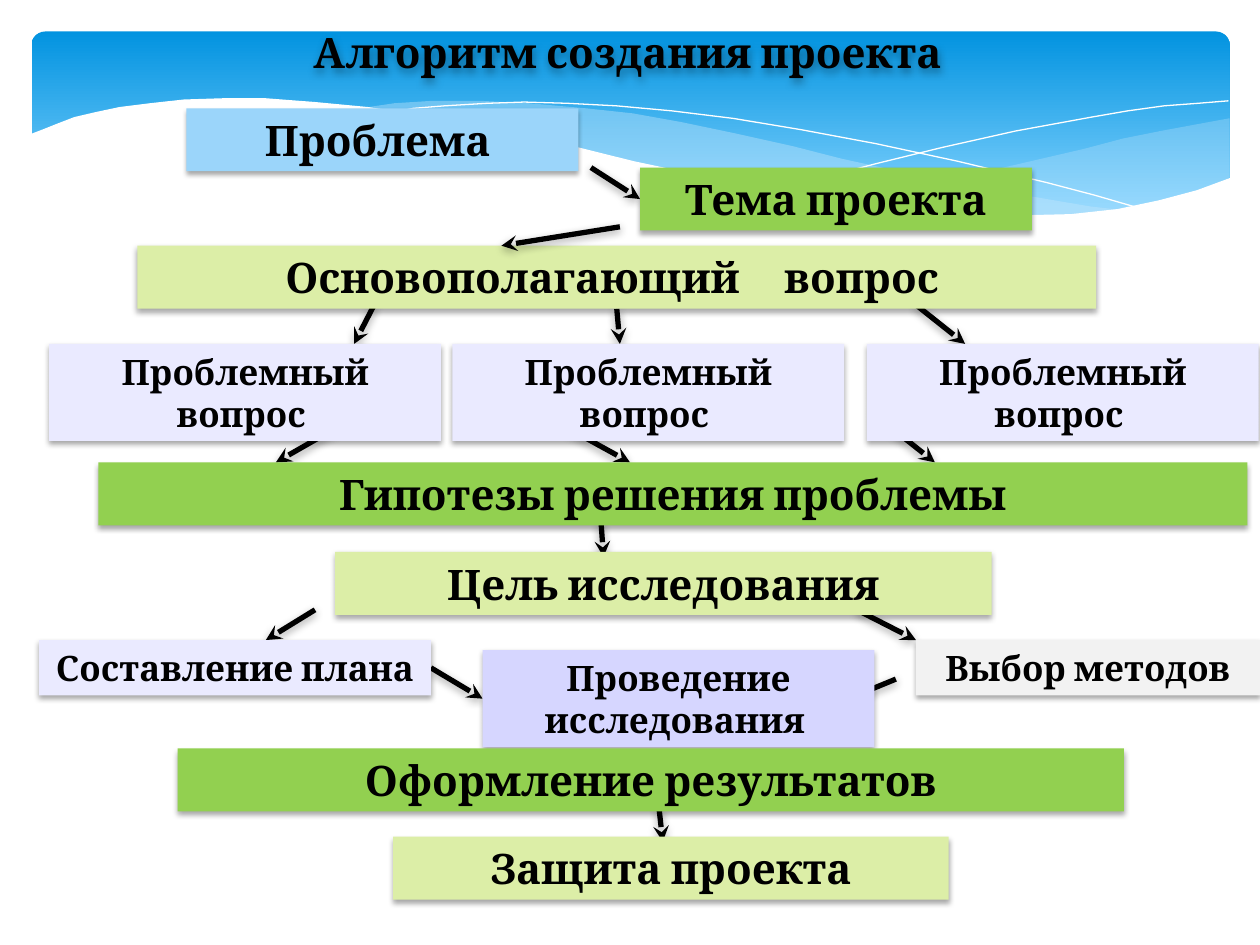
from dataclasses import dataclass

from lxml.etree import SubElement
from pptx import Presentation
from pptx.dml.color import RGBColor
from pptx.enum.shapes import MSO_CONNECTOR as Connector, MSO_SHAPE as Shape
from pptx.enum.text import MSO_ANCHOR as Anchor, MSO_AUTO_SIZE as AutoSize, PP_ALIGN as Align
from pptx.oxml.ns import qn
from pptx.util import Pt

PX = 9144
TOP, LEFT, BOTTOM, RIGHT = 0, 1, 2, 3


@dataclass(frozen=True)
class Theme:
    font: str = "Cambria"
    large: int = 24
    small: int = 20
    arrow_width: int = 3
    ink: str = "000000"
    white: str = "FFFFFF"
    banner_top: str = "0293E0"
    banner_bottom: str = "83D3FE"
    wave: str = "C6E7FC"
    blue: str = "9BD5FA"
    green: str = "92D050"
    lime: str = "DCEEA7"
    lavender: str = "EAEAFF"
    violet: str = "D6D6FF"
    gray: str = "F2F2F2"


THEME = Theme()

FRONT_WAVE = [
    (975, 94), (948, 99), (921, 104), (891, 110), (861, 118), (805, 131), (753, 143),
    (706, 152), (661, 160), (691, 164), (719, 167), (745, 169), (769, 171), (792, 172),
    (824, 172), (854, 170), (881, 167), (905, 163), (928, 158), (949, 152), (976, 141),
    (976, 94),
]
BACK_WAVE = [
    (893, 167), (866, 164), (807, 154), (741, 142), (668, 126), (629, 116), (584, 106),
    (541, 97), (502, 90), (465, 86), (420, 82), (380, 80), (344, 80), (313, 82), (286, 86),
    (323, 90), (362, 97), (404, 106), (449, 116), (530, 135), (584, 146), (634, 156),
    (680, 163), (722, 168), (761, 171), (796, 173), (828, 173), (857, 171), (893, 167),
]
FALLING_CURVE = [
    (309, 90), (328, 86), (353, 84), (387, 82), (416, 81), (450, 82), (489, 84), (533, 88),
    (582, 94), (636, 103), (695, 114), (760, 128), (831, 145), (869, 155), (907, 166),
]
RISING_CURVE = [
    (613, 151), (653, 141), (695, 130), (748, 117), (806, 104), (866, 93), (895, 88),
    (924, 84), (951, 82), (975, 80),
]
WHITE_GROUND = [
    (977, 141), (950, 151), (920, 159), (887, 166), (850, 170), (809, 171), (761, 170),
    (708, 165), (648, 156), (579, 144), (503, 128), (447, 114), (391, 102), (340, 92),
    (292, 85), (250, 81), (211, 78), (177, 78), (146, 79), (119, 82), (95, 85), (76, 89),
    (59, 93), (46, 98), (36, 102), (23, 107), (23, 224), (977, 224), (977, 141),
]

BOXES = {
    "problem": ("Проблема ", 148, 86, 311, 50, THEME.blue),
    "topic": ("Тема проекта", 508, 133, 311, 50, THEME.green),
    "key question": ("Основополагающий вопрос ", 109, 195, 761, 50, THEME.lime),
    "question 1": ("Проблемный вопрос ", 39, 273, 311, 77, THEME.lavender),
    "question 2": ("Проблемный вопрос ", 359, 273, 311, 77, THEME.lavender),
    "question 3": ("Проблемный вопрос ", 688, 273, 311, 77, THEME.lavender),
    "hypotheses": ("Гипотезы решения проблемы", 78, 367, 912, 50, THEME.green),
    "goal": ("Цель исследования", 266, 438, 521, 50, THEME.lime),
    "research": ("Проведение исследования ", 383, 516, 311, 77, THEME.violet),
    "plan": ("Составление плана", 31, 508, 311, 44, THEME.lavender),
    "methods": ("Выбор методов", 727, 508, 273, 44, THEME.gray),
    "results": ("Оформление результатов", 141, 594, 751, 50, THEME.green),
    "defence": ("Защита проекта", 312, 664, 441, 50, THEME.lime),
}
LOOSE_ARROWS = [
    (523, 641, 526, 668), (711, 539, 672, 555), (250, 484, 211, 508), (680, 484, 727, 508),
    (477, 414, 479, 442), (273, 336, 219, 367), (451, 340, 500, 367), (703, 336, 742, 367),
    (297, 242, 281, 273), (727, 242, 766, 273),
]


def color(value):
    return RGBColor.from_string(value)


def add_effects(shape, blur=0):
    effects = SubElement(shape.element.spPr, qn("a:effectLst"))
    if blur:
        shadow = SubElement(effects, qn("a:outerShdw"), blurRad=str(Pt(blur)),
                            dist=str(Pt(1.8)), dir="5400000", rotWithShape="0")
        tint = SubElement(shadow, qn("a:srgbClr"), val=THEME.ink)
        SubElement(tint, qn("a:alpha"), val="35000")


def add_curve(slide, points, fill=None, opacity=100):
    builder = slide.shapes.build_freeform(*points[0], scale=PX)
    builder.add_line_segments(points[1:], close=fill is not None)
    shape = builder.convert_to_shape()
    if fill:
        shape.fill.solid()
        shape.fill.fore_color.rgb = color(fill)
        tint = shape.fill._xPr.find(qn("a:solidFill"))[0]
        SubElement(tint, qn("a:alpha"), val=str(opacity * 1000))
        shape.line.fill.background()
    else:
        shape.fill.background()
        shape.line.color.rgb = color(THEME.white)
        shape.line.width = Pt(0)
    add_effects(shape)


def add_banner(slide):
    banner = slide.shapes.add_shape(Shape.ROUNDED_RECTANGLE, 25 * PX, 25 * PX, 951 * PX, 156 * PX)
    banner.adjustments[0] = 0.07
    banner.fill.gradient()
    banner.fill.gradient_angle = 270
    stops = zip(banner.fill.gradient_stops, (THEME.banner_top, THEME.banner_bottom), (0, 0.9))
    for stop, shade, position in stops:
        stop.color.rgb = color(shade)
        stop.position = position
    banner.line.fill.background()
    add_effects(banner)
    add_curve(slide, FRONT_WAVE, THEME.wave, 29)
    add_curve(slide, BACK_WAVE, THEME.wave, 40)
    add_curve(slide, FALLING_CURVE)
    add_curve(slide, RISING_CURVE)
    add_curve(slide, WHITE_GROUND, THEME.white)


def write_text(shape, text, size):
    frame = shape.text_frame
    frame.word_wrap = True
    frame.auto_size = AutoSize.SHAPE_TO_FIT_TEXT
    frame.vertical_anchor = Anchor.TOP
    paragraph = frame.paragraphs[0]
    paragraph.alignment = Align.CENTER
    paragraph.font.name = THEME.font
    paragraph.font.size = Pt(size)
    paragraph.font.bold = True
    paragraph.font.color.rgb = color(THEME.ink)
    paragraph.add_run().text = text
    return paragraph


def add_title(slide, text):
    title = slide.shapes.title
    title.left, title.top, title.width, title.height = -2 * PX, 16 * PX, 1000 * PX, 50 * PX
    write_text(title, text, THEME.large)
    add_effects(title, 5)
    title.element.getparent().append(title.element)


def add_box(slide, text, left, top, width, height, fill):
    box = slide.shapes.add_shape(Shape.RECTANGLE, left * PX, top * PX, width * PX, height * PX)
    box.fill.solid()
    box.fill.fore_color.rgb = color(fill)
    box.line.fill.background()
    write_text(box, text, THEME.large if height == 50 else THEME.small)
    add_effects(box, 3.1)
    return box


def widen_word_gap(box, spacing):
    paragraph = box.text_frame.paragraphs[0]
    first, rest = paragraph.runs[0].text.split(" ", 1)
    paragraph.runs[0].text = first
    gap = paragraph.add_run()
    gap.text = " "
    gap.font._element.set("spc", str(spacing))
    paragraph.add_run().text = rest


def add_arrow(slide, ends, start=None, finish=None, behind=None):
    arrow = slide.shapes.add_connector(Connector.STRAIGHT, *(end * PX for end in ends))
    if start:
        arrow.begin_connect(*start)
    if finish:
        arrow.end_connect(*finish)
    arrow.line.color.rgb = color(THEME.ink)
    arrow.line.width = Pt(THEME.arrow_width)
    SubElement(arrow.line._get_or_add_ln(), qn("a:tailEnd"), type="stealth")
    add_effects(arrow, 5)
    if behind is not None:
        behind.element.addprevious(arrow.element)


def main():
    presentation = Presentation()
    presentation.slide_width, presentation.slide_height = 1000 * PX, 750 * PX
    slide = presentation.slides.add_slide(presentation.slide_layouts[5])
    add_banner(slide)
    add_title(slide, "Алгоритм создания проекта")
    boxes = {name: add_box(slide, *box) for name, box in BOXES.items()}
    widen_word_gap(boxes["key question"], 2000)
    back = slide.shapes.title
    for ends in LOOSE_ARROWS:
        add_arrow(slide, ends, behind=back)
    add_arrow(slide, (469, 133, 508, 158), finish=(boxes["topic"], LEFT), behind=back)
    add_arrow(slide, (490, 246, 492, 273), start=(boxes["key question"], BOTTOM), behind=back)
    add_arrow(slide, (342, 530, 383, 554), (boxes["plan"], RIGHT), (boxes["research"], LEFT), back)
    add_arrow(slide, (492, 180, 398, 195))
    presentation.save("out.pptx")


if __name__ == "__main__":
    main()
